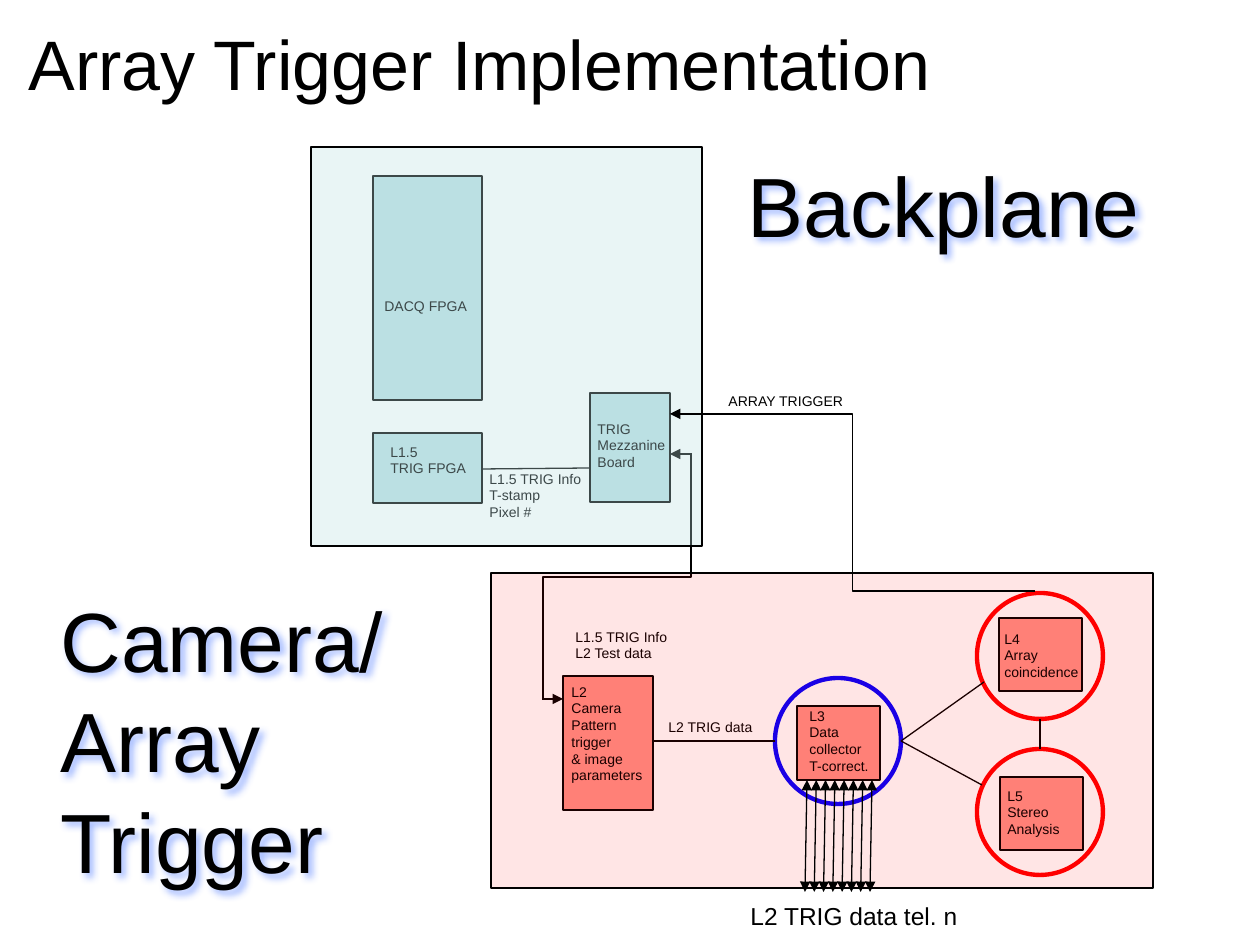
from lxml import etree
from pptx import Presentation
from pptx.dml.color import RGBColor
from pptx.enum import shapes, text
from pptx.oxml.ns import qn
from pptx.util import Pt

PX = 914400 / 126  # EMU in one px
BLACK, TEAL, CORAL, RED, BLUE = "000000", "BBE0E3", "FF8F85", "FF0000", "0000FF"


def px(*values):
    return [round(v * PX) for v in values]


def rgb(value):
    return RGBColor.from_string(value)


def sub(parent, tag, **attrs):
    return etree.SubElement(parent, qn(tag), {k: str(v) for k, v in attrs.items()})


class Diagram:
    font = "Arial"
    thin = 0.75

    def __init__(self, slide):
        self.slide = slide

    def shape(self, kind, x, y, w, h, fill=None, line=BLACK, width=thin, alpha=None):
        sp = self.slide.shapes.add_shape(kind, *px(x, y, w, h))
        sp.shadow.inherit = False
        if fill:
            sp.fill.solid()
            sp.fill.fore_color.rgb = rgb(fill)
        else:
            sp.fill.background()
        if alpha:
            color = sp.fill._xPr.find(qn("a:solidFill"))[0]
            sub(color, "a:alpha", val=alpha * 1000)
        sp.line.color.rgb = rgb(line)
        sp.line.width = Pt(width)

    def box(self, x, y, w, h, fill, alpha=None):
        self.shape(shapes.MSO_SHAPE.RECTANGLE, x, y, w, h, fill, alpha=alpha)

    def ring(self, x, y, color):
        self.shape(shapes.MSO_SHAPE.OVAL, x, y, 126, 126, line=color, width=2.5)

    def label(self, x, y, w, h, words, size=8, wrap=False, glow=False):
        sp = self.slide.shapes.add_textbox(*px(x, y, w, h))
        tf = sp.text_frame
        tf.word_wrap = wrap
        tf.auto_size = text.MSO_AUTO_SIZE.SHAPE_TO_FIT_TEXT
        tf.text = words
        for p in tf.paragraphs:
            for r in p.runs:
                r.font.size = Pt(size)
                r.font.name = self.font
                r.font.color.rgb = rgb(BLACK)
        if glow:
            effects = sub(sp._element.spPr, "a:effectLst")
            shadow = sub(effects, "a:outerShdw", blurRad=50800, dist=38100,
                         dir=2700000, algn="tl", rotWithShape=0)
            sub(sub(shadow, "a:srgbClr", val="3366FF"), "a:alpha", val=43000)

    def line(self, x1, y1, x2, y2, head=False, tail=False, bent=False, turn=0):
        kind = shapes.MSO_CONNECTOR.ELBOW if bent else shapes.MSO_CONNECTOR.STRAIGHT
        cx = self.slide.shapes.add_connector(kind, *px(x1, y1, x2, y2))
        cx.line.color.rgb = rgb(BLACK)
        cx.line.width = Pt(self.thin)
        ln = cx.line._get_or_add_ln()
        for wanted, tag in ((head, "a:headEnd"), (tail, "a:tailEnd")):
            if wanted:
                sub(ln, tag, type="triangle")
        sp_pr = cx._element.spPr
        sub(sp_pr, "a:effectLst")
        if turn:
            sp_pr.find(qn("a:xfrm")).set("rot", str(turn * 60000))


def main():
    prs = Presentation()
    prs.slide_width, prs.slide_height = px(1260, 945)
    s = Diagram(prs.slides.add_slide(prs.slide_layouts[6]))

    s.label(16, 14, 1066, 97, "Array Trigger Implementation", 40, wrap=True)

    # Backplane boards
    s.box(373, 176, 109, 224, TEAL)
    s.label(372, 291, 111, 30, "DACQ FPGA")
    s.box(373, 433, 109, 70, TEAL)
    s.label(378, 437, 103, 63, "L1.5\nTRIG FPGA")
    s.box(590, 393, 80, 109, TEAL)
    s.label(585, 414, 95, 81, "TRIG\nMezzanine\nBoard")

    # Trigger levels
    s.box(563, 676, 90, 134, CORAL)
    s.label(559, 677, 97, 115, "L2\nCamera\nPattern\ntrigger\n& image\nparameters")
    s.box(797, 706, 83, 74, CORAL)
    s.label(797, 701, 86, 97, "L3\nData\ncollector\nT-correct.")
    s.box(999, 618, 83, 73, CORAL)
    s.label(992, 624, 102, 81, "L4\nArray\ncoincidence")
    s.box(1000, 777, 83, 73, CORAL)
    s.label(995, 781, 78, 97, "L5\nStereo\nAnalysis")

    # Mezzanine board links
    s.line(482, 469, 590, 468)
    s.label(477, 464, 120, 81, "L1.5 TRIG Info\nT-stamp\nPixel #")
    s.line(494, 503, 740, 651, bent=True, turn=90)
    s.line(670, 454, 692, 454, head=True)
    s.line(544, 699, 563, 699, tail=True)
    s.label(563, 622, 120, 63, "L1.5 TRIG Info\nL2 Test data")
    s.label(656, 712, 112, 30, "L2 TRIG data")

    # Rings and the links between them
    for x, y, color in ((977, 593, RED), (977, 749, RED), (775, 678, BLUE)):
        s.ring(x, y, color)
    s.line(775, 741, 653, 741)
    s.line(901, 741, 982, 785)
    s.line(1040, 749, 1040, 719)
    s.line(901, 741, 984, 682)

    # Translucent areas over the parts
    s.box(311, 147, 391, 399, TEAL, alpha=32)
    s.box(491, 573, 662, 315, RED, alpha=10)

    # Array trigger and telescope data
    s.line(1035, 591, 670, 414, tail=True, bent=True)
    for i in range(8):
        x = 805 + i * 65 / 7
        s.line(x, 892, x + 2, 780, head=True, tail=True)
    s.label(738, 895, 234, 43, "L2 TRIG data tel. n", 14)
    s.label(716, 386, 142, 30, "ARRAY TRIGGER")

    # Area names
    s.label(735, 147, 422, 115, "Backplane", 48, glow=True)
    s.label(48, 582, 354, 318, "Camera/\nArray\nTrigger", 48, glow=True)

    prs.save("out.pptx")


if __name__ == "__main__":
    main()
